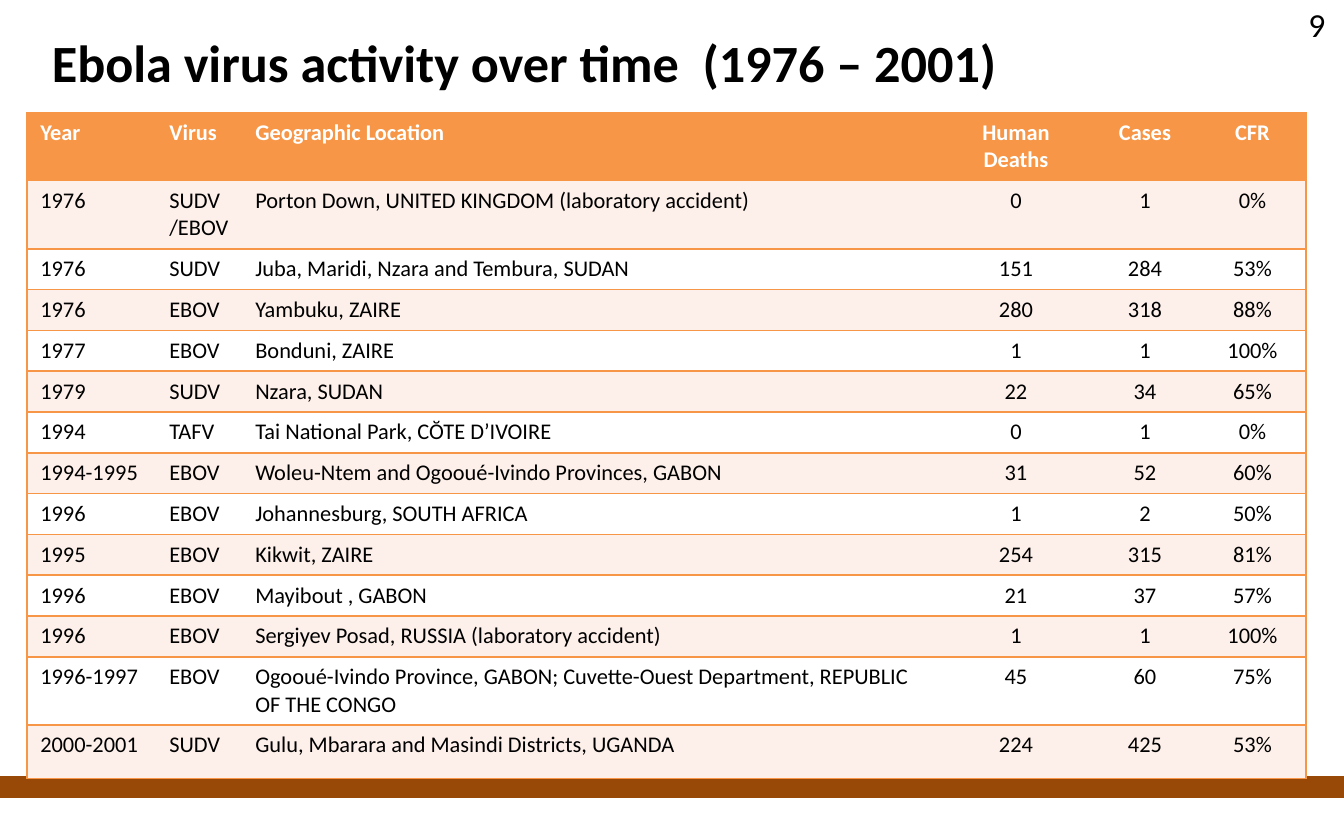
import pptx
import pptx.dml.color
import pptx.enum.shapes
import pptx.enum.text
import pptx.oxml
import pptx.oxml.ns
import pptx.util

RGBColor = pptx.dml.color.RGBColor
Align = pptx.enum.text.PP_ALIGN
Anchor = pptx.enum.text.MSO_ANCHOR

BLACK = RGBColor(0x00, 0x00, 0x00)
WHITE = RGBColor(0xFF, 0xFF, 0xFF)
ORANGE = RGBColor(0xF7, 0x96, 0x46)
BLUSH = RGBColor(0xFD, 0xEF, 0xE9)
BROWN = RGBColor(0x98, 0x48, 0x07)
PLAIN_TABLE = "{2D5ABB26-0587-4C30-8999-92F81FD0307C}"

HEADINGS = ("Year", "Virus", "Geographic Location", "Human Deaths", "Cases", "CFR")
OUTBREAKS = (
    ("1976", "SUDV /EBOV", "Porton Down, UNITED KINGDOM (laboratory accident)", "0", "1", "0%"),
    ("1976", "SUDV", "Juba, Maridi, Nzara and Tembura, SUDAN", "151", "284", "53%"),
    ("1976", "EBOV", "Yambuku, ZAIRE", "280", "318", "88%"),
    ("1977", "EBOV", "Bonduni, ZAIRE", "1", "1", "100%"),
    ("1979", "SUDV", "Nzara, SUDAN", "22", "34", "65%"),
    ("1994", "TAFV", "Tai National Park, CŎTE D’IVOIRE", "0", "1", "0%"),
    ("1994-1995", "EBOV", "Woleu-Ntem and Ogooué-Ivindo Provinces, GABON", "31", "52", "60%"),
    ("1996", "EBOV", "Johannesburg, SOUTH AFRICA", "1", "2", "50%"),
    ("1995", "EBOV", "Kikwit, ZAIRE", "254", "315", "81%"),
    ("1996", "EBOV", "Mayibout , GABON", "21", "37", "57%"),
    ("1996", "EBOV", "Sergiyev Posad, RUSSIA (laboratory accident)", "1", "1", "100%"),
    ("1996-1997", "EBOV",
     "Ogooué-Ivindo Province, GABON; Cuvette-Ouest Department, REPUBLIC OF THE CONGO",
     "45", "60", "75%"),
    ("2000-2001", "SUDV", "Gulu, Mbarara and Masindi Districts, UGANDA", "224", "425", "53%"),
)
# Percent of the slide's width and height
COLUMN_WIDTHS = (9.6, 6.4, 52, 11.2, 8, 8)
ROW_HEIGHTS = (7.04, 6.88, *[4.16] * 10, 7.04, 6.4)


class SlideBuilder:
    """Holds the style and the current slide; lengths are percent of the slide."""

    font = "Calibri"

    def __init__(self, deck):
        self.deck = deck
        self.slide = deck.slides.add_slide(deck.slide_layouts[6])

    def across(self, share):
        return round(self.deck.slide_width * share / 100)

    def down(self, share):
        return round(self.deck.slide_height * share / 100)

    def area(self, left, top, width, height):
        return self.across(left), self.down(top), self.across(width), self.down(height)

    def set_text(self, frame, text, size, color, bold=False, align=Align.LEFT):
        frame.text = text
        para = frame.paragraphs[0]
        para.alignment = align
        for span in para.runs:
            span.font.name = self.font
            span.font.size = pptx.util.Pt(size)
            span.font.bold = bold
            span.font.color.rgb = color

    def bar(self, place, color):
        shape = self.slide.shapes.add_shape(
            pptx.enum.shapes.MSO_SHAPE.RECTANGLE, *self.area(*place))
        shape.shadow.inherit = False
        shape.fill.solid()
        shape.fill.fore_color.rgb = color
        shape.line.fill.background()

    def text(self, place, text, size, wrap=True, anchor=Anchor.TOP, **style):
        frame = self.slide.shapes.add_textbox(*self.area(*place)).text_frame
        frame.word_wrap = wrap
        frame.vertical_anchor = anchor
        self.set_text(frame, text, size, BLACK, **style)

    def border(self, cell, sides):
        for side in sides:
            cell._tc.get_or_add_tcPr().append(pptx.oxml.parse_xml(
                f'<a:ln{side} {pptx.oxml.ns.nsdecls("a")} w="12700"><a:solidFill>'
                f'<a:srgbClr val="{ORANGE}"/></a:solidFill></a:ln{side}>'))

    def table(self, left, top, rows, widths, heights):
        place = self.area(left, top, sum(widths), sum(heights))
        table = self.slide.shapes.add_table(len(rows), len(widths), *place).table
        table._tbl.tblPr.find(pptx.oxml.ns.qn("a:tableStyleId")).text = PLAIN_TABLE
        for column, width in zip(table.columns, widths):
            column.width = self.across(width)
        for row, height in zip(table.rows, heights):
            row.height = self.down(height)
        last = len(widths) - 1
        for r, values in enumerate(rows):
            header = r == 0
            fill = ORANGE if header else BLUSH if r % 2 else WHITE
            for c, value in enumerate(values):
                cell = table.cell(r, c)
                # Outer frame and row rules only; XML order is L, R, T, B
                self.border(cell, "L" * (c == 0) + "R" * (c == last) + "TB")
                cell.fill.solid()
                cell.fill.fore_color.rgb = fill
                self.set_text(cell.text_frame, value, 12, WHITE if header else BLACK,
                              bold=header, align=Align.CENTER if c > 2 else Align.LEFT)


def main():
    deck = pptx.Presentation()
    deck.slide_width = pptx.util.Inches(10)
    deck.slide_height = pptx.util.Inches(6.25)
    page = SlideBuilder(deck)

    # Footer band
    page.bar((0, 92.4, 100, 2.6), BROWN)
    # Outbreak table
    page.table(2, 13.4, (HEADINGS, *OUTBREAKS), COLUMN_WIDTHS, ROW_HEIGHTS)
    # Title and page number
    page.text((2, 0, 95.7, 14.56), " Ebola virus activity over time  (1976 – 2001)", 28,
              anchor=Anchor.MIDDLE, bold=True)
    page.text((96.3, -0.3, 3.3, 6.4), "9", 18, wrap=False, align=Align.RIGHT)

    deck.save("out.pptx")


if __name__ == "__main__":
    main()
